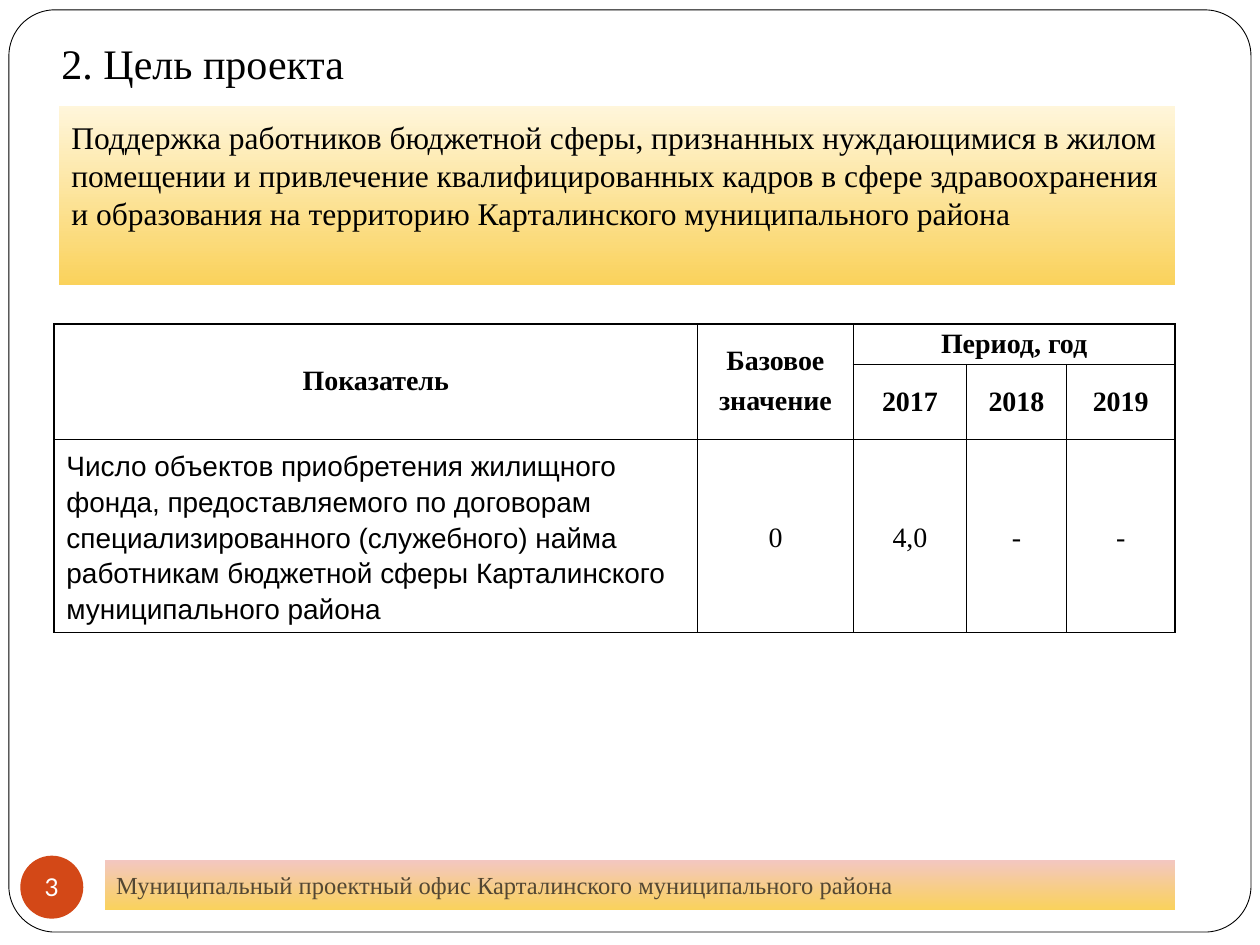
from lxml.etree import SubElement
from pptx import Presentation
from pptx.dml.color import RGBColor
from pptx.enum.shapes import MSO_SHAPE
from pptx.enum.text import MSO_ANCHOR, PP_ALIGN
from pptx.oxml.ns import qn
from pptx.util import Cm, Pt

BLACK = RGBColor(0x00, 0x00, 0x00)
WHITE = RGBColor(0xFF, 0xFF, 0xFF)
ORANGE = RGBColor(0xD3, 0x48, 0x17)
CREAM = RGBColor(0xFF, 0xF6, 0xDB)
GOLD = RGBColor(0xFA, 0xD2, 0x5C)
PINK = RGBColor(0xF3, 0xC7, 0xC1)
BROWN = RGBColor(0x53, 0x47, 0x33)
SERIF = "Times New Roman"


def style(par, size, color=BLACK, font=SERIF, bold=False):
    for run in par.runs:
        run.font.size = Pt(size)
        run.font.name = font
        run.font.bold = bold
        run.font.color.rgb = color


def write(shape, text, size, color=BLACK, font=SERIF, inset=0.25,
          align=PP_ALIGN.LEFT, anchor=MSO_ANCHOR.TOP, wrap=True):
    frame = shape.text_frame
    frame.text = text
    frame.word_wrap = wrap
    frame.vertical_anchor = anchor
    frame.margin_left = frame.margin_right = Cm(inset)
    frame.margin_top = frame.margin_bottom = Cm(inset)
    par = frame.paragraphs[0]
    par.alignment = align
    style(par, size, color, font)


def block(slide, kind, left, top, width, height):
    shape = slide.shapes.add_shape(
        kind, Cm(left), Cm(top), Cm(width), Cm(height))
    shape.shadow.inherit = False
    shape.line.fill.background()
    return shape


def blend(shape, first, last):
    fill = shape.fill
    fill.gradient()
    fill.gradient_angle = 270  # top to bottom
    for stop, color in zip(fill.gradient_stops, (first, last)):
        stop.color.rgb = color


def add_frame(slide, left, top, width, height):
    shape = block(slide, MSO_SHAPE.ROUNDED_RECTANGLE, left, top, width, height)
    shape.adjustments[0] = 0.05
    shape.fill.solid()
    shape.fill.fore_color.rgb = WHITE
    shape.line.color.rgb = BLACK
    shape.line.width = Pt(0.5)


def add_goal(slide, left, top, width, height):
    # Heading
    title = slide.shapes.add_textbox(
        Cm(left - 0.18), Cm(top), Cm(19.53), Cm(1.32))
    write(title, "2. Цель проекта", 24, inset=0.23)
    # Goal panel under the heading
    panel = block(slide, MSO_SHAPE.RECTANGLE,
                  left, top + 1.6, width, height - 1.6)
    blend(panel, CREAM, GOLD)
    write(panel, "Поддержка работников бюджетной сферы, признанных нуждающимися "
          "в жилом помещении и привлечение квалифицированных кадров в сфере "
          "здравоохранения и образования на территорию Карталинского "
          "муниципального района", 18)


def border(cell):
    props = cell._tc.get_or_add_tcPr()
    for side in "LRTB":
        line = SubElement(props, qn("a:ln" + side), w=str(Pt(1)))
        fill = SubElement(line, qn("a:solidFill"))
        SubElement(fill, qn("a:srgbClr"), val=str(BLACK))


def add_table(slide, left, top, width, height):
    rows = [
        ["Показатель", "Базовое\nзначение", "Период, год", "", ""],
        ["", "", "2017", "2018", "2019"],
        ["Число объектов приобретения жилищного фонда, предоставляемого по "
         "договорам специализированного (служебного) найма работникам "
         "бюджетной сферы Карталинского муниципального района",
         "0", "4,0", "-", "-"],
    ]
    table = slide.shapes.add_table(
        3, 5, Cm(left), Cm(top), Cm(width), Cm(height)).table
    # Columns and rows as shares of the box
    for col, share in zip(table.columns, (0.574, 0.139, 0.101, 0.089, 0.097)):
        col.width = Cm(width * share)
    for row, share in zip(table.rows, (0.14, 0.24, 0.62)):
        row.height = Cm(height * share)

    for r, row in enumerate(rows):
        head = r < 2
        for c, text in enumerate(row):
            cell = table.cell(r, c)
            border(cell)
            cell.fill.solid()
            cell.fill.fore_color.rgb = WHITE
            cell.vertical_anchor = MSO_ANCHOR.MIDDLE
            cell.margin_left = cell.margin_right = 0
            cell.margin_top = cell.margin_bottom = 0
            cell.text_frame.text = text
            label = not head and c == 0
            for par in cell.text_frame.paragraphs:
                par.alignment = PP_ALIGN.LEFT if label else PP_ALIGN.CENTER
                par.line_spacing = 0.96 if head else 1.15
                style(par, 16, font="Arial" if label else SERIF, bold=head)

    # Space before the second line of the base heading
    table.cell(0, 1).text_frame.paragraphs[1].space_before = Pt(6)
    # Indent of the indicator name
    name = table.cell(2, 0).text_frame.paragraphs[0]
    name._p.get_or_add_pPr().set("marL", str(Cm(0.25)))

    # Merged headings
    for c in (0, 1):
        table.cell(0, c).merge(table.cell(1, c))
    table.cell(0, 2).merge(table.cell(0, 4))


def add_footer(slide, left, top, width, height):
    # Page number
    badge = block(slide, MSO_SHAPE.OVAL, left, top, height, height)
    badge.fill.solid()
    badge.fill.fore_color.rgb = ORANGE
    write(badge, "3", 14, WHITE, "Lato", 0, PP_ALIGN.CENTER,
          MSO_ANCHOR.MIDDLE, wrap=False)
    # Office name
    bar = block(slide, MSO_SHAPE.RECTANGLE,
                left + 1.7, top + 0.08, width - 1.7, 1.02)
    blend(bar, PINK, GOLD)
    write(bar, "Муниципальный проектный офис Карталинского муниципального района",
          14, BROWN, inset=0.23, anchor=MSO_ANCHOR.MIDDLE)


def main():
    deck = Presentation()
    deck.slide_width, deck.slide_height = Cm(25.4), Cm(19.05)
    slide = deck.slides.add_slide(deck.slide_layouts[6])
    add_frame(slide, 0.18, 0.2, 25.04, 18.59)
    add_goal(slide, 1.19, 0.53, 22.5, 5.21)
    add_table(slide, 1.09, 6.53, 22.6, 5.86)
    add_footer(slide, 0.41, 17.25, 23.28, 1.27)
    deck.save("out.pptx")


if __name__ == "__main__":
    main()
